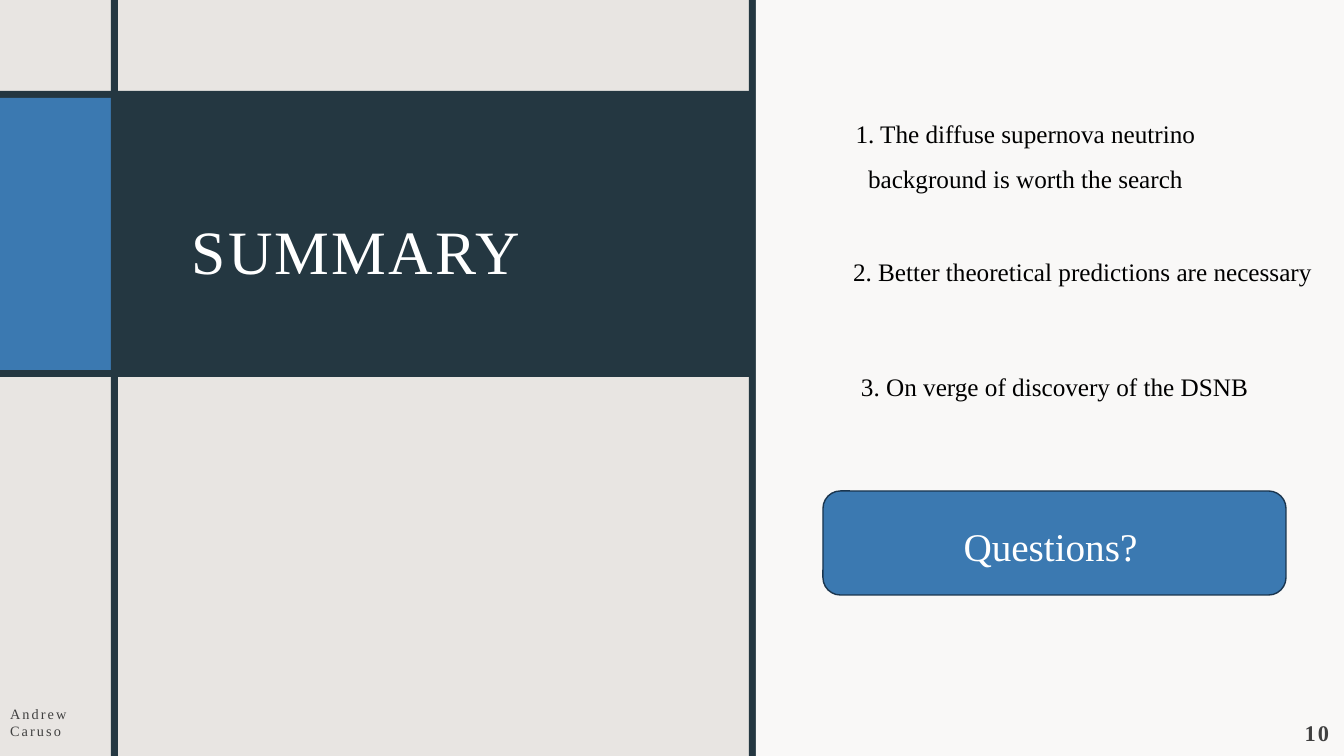
import pptx
import pptx.util
import pptx.dml.color
import pptx.enum.shapes
import pptx.enum.text

PX = 914400 / 100.8
W, H = 1344, 756
BAR = 7
COLORS = {"page": "E8E5E2", "panel": "F9F8F7", "dark": "243741", "blue": "3B79B1",
          "outline": "1A354E", "white": "FFFFFF", "black": "000000", "grey": "404040"}
SHAPE = pptx.enum.shapes.MSO_SHAPE
ALIGN = pptx.enum.text.PP_ALIGN
ANCHOR = pptx.enum.text.MSO_ANCHOR


def box(*lengths):
    return [round(n * PX) for n in lengths]


def write(sp, text, size, color="black", align=ALIGN.LEFT, anchor=ANCHOR.TOP,
          line=1.0, after=0, bold=False, spacing=0, insets=(10, 5, 10, 5)):
    tf = sp.text_frame
    tf.word_wrap = True
    tf.auto_size = pptx.enum.text.MSO_AUTO_SIZE.NONE
    tf.vertical_anchor = anchor
    tf.margin_left, tf.margin_top, tf.margin_right, tf.margin_bottom = box(*insets)
    p = tf.paragraphs[0]
    p.alignment, p.line_spacing = align, line
    p.space_before, p.space_after = pptx.util.Pt(0), pptx.util.Pt(after)
    r = p.add_run()
    r.text = text
    r.font.name, r.font.size, r.font.bold = "Times New Roman", pptx.util.Pt(size), bold
    r.font.color.rgb = pptx.dml.color.RGBColor.from_string(COLORS[color])
    if spacing:
        r.font._element.set("spc", str(spacing))


prs = pptx.Presentation()
prs.slide_width, prs.slide_height = box(W, H)
s = prs.slides.add_slide(prs.slide_layouts[5])
s.background.fill.solid()
s.background.fill.fore_color.rgb = pptx.dml.color.RGBColor.from_string(COLORS["page"])

# Panels, vertical bars and the question button
for kind, color, area in [
    (SHAPE.RECTANGLE, "dark", (0, 91, 749, 286)),
    (SHAPE.RECTANGLE, "blue", (0, 98, 111, 272)),
    (SHAPE.RECTANGLE, "dark", (111, 0, BAR, H)),
    (SHAPE.RECTANGLE, "dark", (749, 0, BAR, H)),
    (SHAPE.RECTANGLE, "panel", (756, 0, W - 756, H)),
    (SHAPE.ROUNDED_RECTANGLE, "blue", (823, 491, 463, 104)),
]:
    sp = s.shapes.add_shape(kind, *box(*area))
    sp.shadow.inherit = False
    sp.fill.solid()
    sp.fill.fore_color.rgb = pptx.dml.color.RGBColor.from_string(COLORS[color])
    sp.line.fill.background()

# Outline of the button, the last shape drawn
sp.line.color.rgb = pptx.dml.color.RGBColor.from_string(COLORS["outline"])
sp.line.width = pptx.util.Pt(1)

# Title, brought in front of the dark band
title = s.shapes.title
s.shapes._spTree.append(title._element)
title.left, title.top, title.width, title.height = box(180, 117, 523, 245)
framed = {"spacing": 150, "insets": (12, 12, 12, 10)}
write(title, "SUMMARY", 44, color="white", anchor=ANCHOR.MIDDLE, line=1.25, **framed)

# Summary points, button label, author and slide number
centred = {"align": ALIGN.CENTER, "line": 1.5}
for text, size, area, fmt in [
    ("1. The diffuse supernova neutrino background is worth the search", 18,
     (802, 98, 447, 97), centred),
    ("2. Better theoretical predictions are necessary", 18, (821, 236, 523, 50), centred),
    ("3. On verge of discovery of the DSNB", 18, (851, 351, 490, 83), {"line": 1.5}),
    ("Questions?", 28, (820, 494, 461, 73), {"color": "white", **centred}),
    ("Andrew Caruso", 10.2, (-2, 696, 123, 50),
     {"color": "grey", "anchor": ANCHOR.MIDDLE, "after": 6, **framed}),
    ("10", 16, (1233, 706, 108, 50),
     {"color": "grey", "anchor": ANCHOR.BOTTOM, "align": ALIGN.RIGHT, "after": 6,
      "bold": True, **framed}),
]:
    write(s.shapes.add_textbox(*box(*area)), text, size, **fmt)

prs.save("out.pptx")
